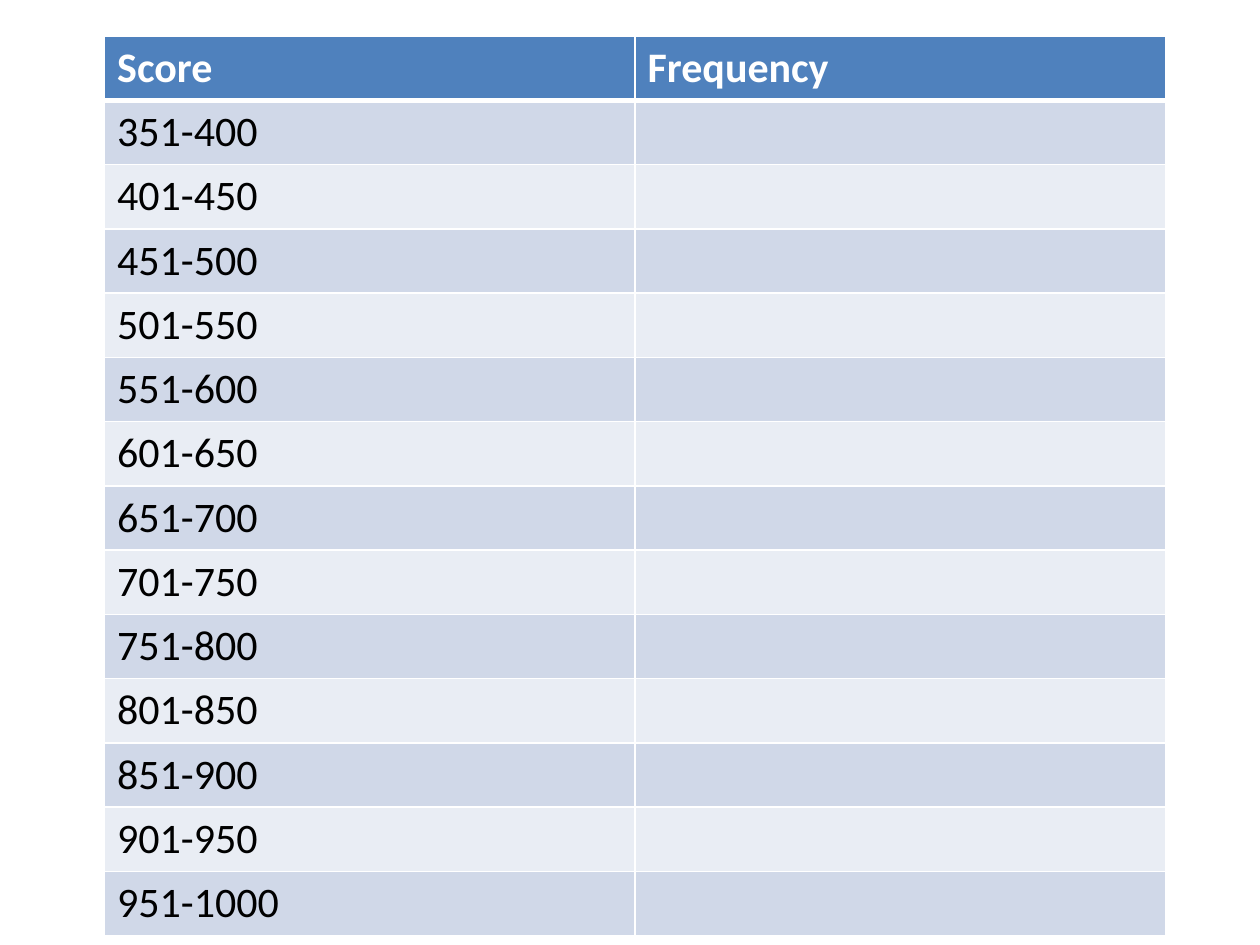
import pptx
import pptx.dml.color
import pptx.oxml.ns
import pptx.util
from lxml import etree

COLORS = {
    "header": "4F81BD",
    "odd": "D0D8E8",
    "even": "E9EDF4",
    "light": "FFFFFF",
    "dark": "000000",
}


class SlideBuilder:
    """Holds the style and the current slide, with lengths as shares of its size."""

    def __init__(self, presentation, font="Calibri", size=24):
        self.width = presentation.slide_width
        self.height = presentation.slide_height
        self.font = font
        self.size = pptx.util.Pt(size)
        self.slide = presentation.slides.add_slide(presentation.slide_layouts[6])

    def color(self, name):
        return pptx.dml.color.RGBColor.from_string(COLORS[name])

    def borders(self, cell, top, bottom):
        properties = cell._tc.get_or_add_tcPr()
        qn = pptx.oxml.ns.qn
        for side, points in (("L", 1), ("R", 1), ("T", top), ("B", bottom)):
            line = etree.SubElement(
                properties, qn(f"a:ln{side}"), w=str(pptx.util.Pt(points))
            )
            fill = etree.SubElement(line, qn("a:solidFill"))
            etree.SubElement(fill, qn("a:srgbClr"), val=COLORS["light"])

    def cell(self, cell, text, row):
        header = row == 0
        self.borders(cell, top=3 if row == 1 else 1, bottom=3 if header else 1)
        cell.fill.solid()
        band = "header" if header else ("even", "odd")[row % 2]
        cell.fill.fore_color.rgb = self.color(band)
        cell.text = text
        font = cell.text_frame.paragraphs[0].font
        font.name = self.font
        font.size = self.size
        font.bold = header
        font.color.rgb = self.color("light" if header else "dark")

    def table(self, rows, left, top, width, header_height, row_height):
        heights = [header_height] + [row_height] * (len(rows) - 1)
        shape = self.slide.shapes.add_table(
            len(rows),
            len(rows[0]),
            int(left * self.width),
            int(top * self.height),
            int(width * self.width),
            int(sum(heights) * self.height),
        )
        for row, (texts, height) in enumerate(zip(rows, heights)):
            shape.table.rows[row].height = int(height * self.height)
            for column, text in enumerate(texts):
                self.cell(shape.table.cell(row, column), text, row)


def main():
    presentation = pptx.Presentation()
    presentation.slide_width = pptx.util.Inches(10)
    presentation.slide_height = pptx.util.Inches(7.5)
    scores = [(f"{low}-{low + 49}", "") for low in range(351, 1000, 50)]
    SlideBuilder(presentation).table(
        [("Score", "Frequency")] + scores,
        left=0.83 / 10,
        top=0.29 / 7.5,
        width=8.42 / 10,
        header_height=0.39 / 7.5,
        row_height=0.51 / 7.5,
    )
    presentation.save("out.pptx")


if __name__ == "__main__":
    main()
